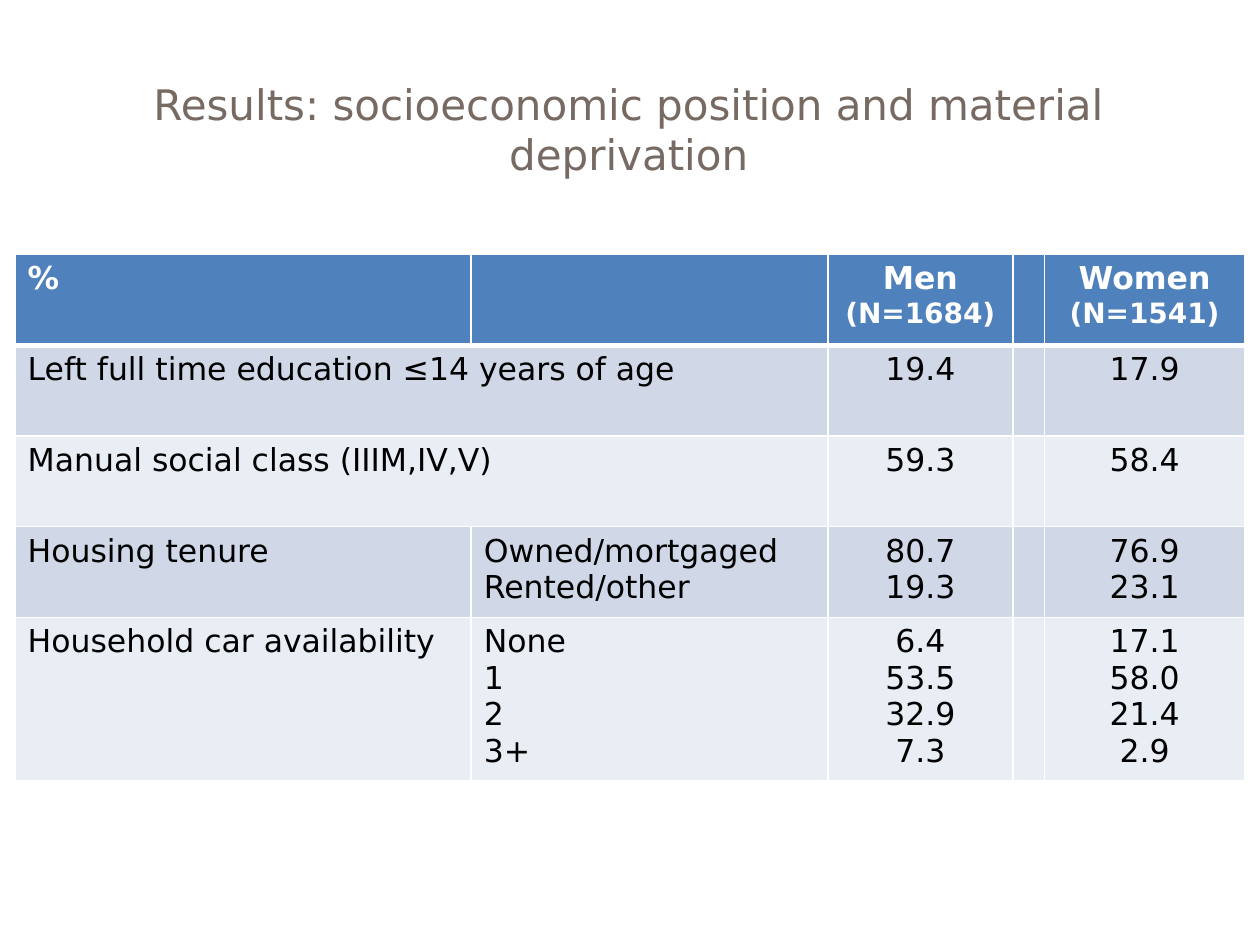
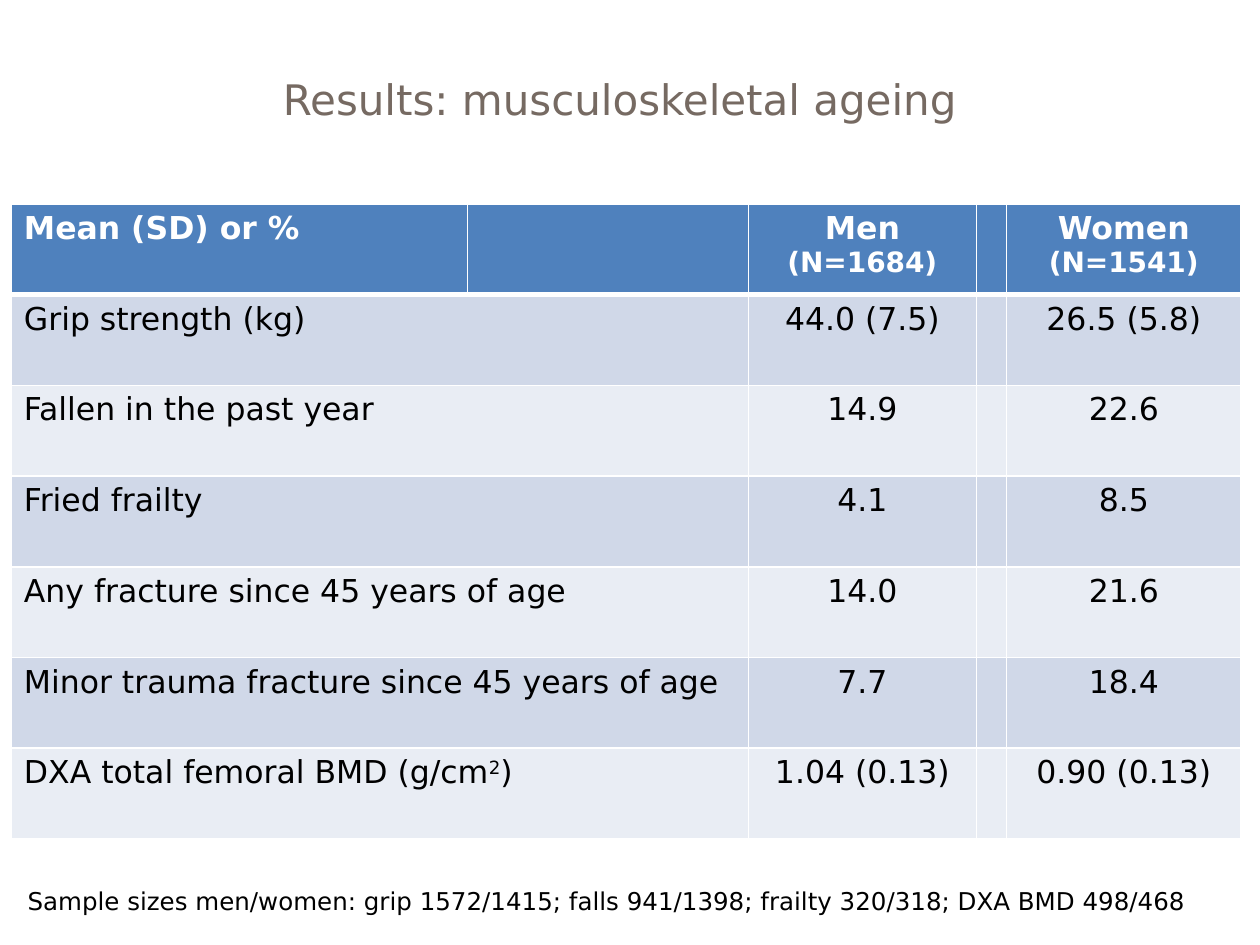
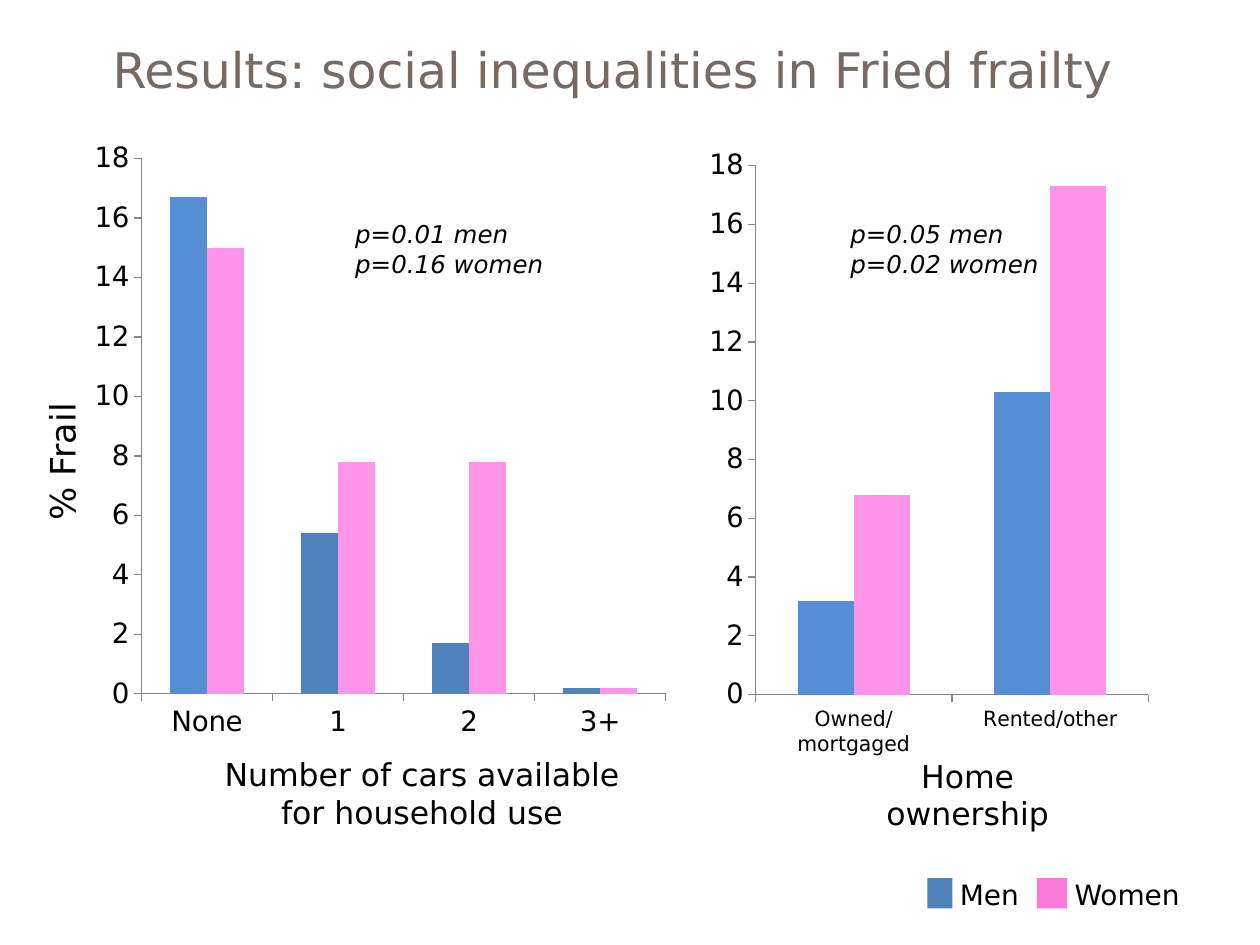
from dataclasses import dataclass

from lxml.etree import SubElement
from pptx import Presentation
from pptx.chart.data import CategoryChartData
from pptx.dml.color import RGBColor
from pptx.enum.chart import XL_CHART_TYPE, XL_TICK_MARK
from pptx.enum.shapes import MSO_SHAPE
from pptx.enum.text import MSO_ANCHOR, PP_ALIGN
from pptx.oxml.ns import qn
from pptx.util import Emu, Inches, Pt

FONT = "DejaVu Sans"
TITLE_BROWN = RGBColor(0x76, 0x6A, 0x62)
BLACK = RGBColor(0x00, 0x00, 0x00)
WHITE = RGBColor(0xFF, 0xFF, 0xFF)
AXIS_GREY = RGBColor(0x86, 0x86, 0x86)
BLUE = RGBColor(0x4F, 0x81, 0xBD)
LIGHT_BLUE = RGBColor(0x55, 0x8E, 0xD5)
PINK = RGBColor(0xFE, 0x94, 0xE7)
LEGEND_PINK = RGBColor(0xFB, 0x79, 0xD9)
BANDS = (RGBColor(0xD0, 0xD8, 0xE8), RGBColor(0xE9, 0xED, 0xF4))

# The slide is a grid of 100 columns by 75 rows.
SLIDE_W, SLIDE_H = Inches(10), Inches(7.5)
COL, ROW = SLIDE_W / 100, SLIDE_H / 75
TABLE_ROW = 7.2
TITLE_W, TITLE_H = 97, 7.1

MEN_WOMEN = ["Men\n(N=1684)", "", "Women\n(N=1541)"]


@dataclass(frozen=True)
class Box:
    x: float
    y: float
    w: float
    h: float

    def emu(self) -> tuple[Emu, Emu, Emu, Emu]:
        return (Emu(round(self.x * COL)), Emu(round(self.y * ROW)),
                Emu(round(self.w * COL)), Emu(round(self.h * ROW)))


@dataclass(frozen=True)
class Style:
    size: float
    color: RGBColor = BLACK
    bold: bool = False
    italic: bool = False
    align: PP_ALIGN = PP_ALIGN.LEFT


@dataclass(frozen=True)
class Label:
    text: str
    box: Box
    style: Style
    rotation: float = 0


@dataclass(frozen=True)
class ResultTable:
    """Cells are strings; None continues the cell to its left."""
    x: float
    y: float
    widths: list[float]
    rows: list[list[str | None]]


@dataclass(frozen=True)
class FrailtyChart:
    box: Box
    categories: list[str]
    men: list[float]
    women: list[float]
    men_color: RGBColor
    size: float
    plot: tuple[float, float, float, float]


@dataclass(frozen=True)
class LegendKey:
    name: str
    swatch: Box
    color: RGBColor


def write(tf, text: str, style: Style, later_size: float | None = None) -> None:
    """Fill a frame line by line; text between carets is superscript."""
    for i, line in enumerate(text.split("\n")):
        p = tf.add_paragraph() if i else tf.paragraphs[0]
        p.alignment = style.align
        for j, part in enumerate(line.split("^")):
            r = p.add_run()
            r.text = part
            f = r.font
            f.name, f.bold, f.italic = FONT, style.bold, style.italic
            f.size = Pt(later_size if i and later_size else style.size)
            f.color.rgb = style.color
            if j % 2:
                r._r.get_or_add_rPr().set("baseline", "30000")


def add_label(s, label: Label, wrap: bool = True) -> None:
    sp = s.shapes.add_textbox(*label.box.emu())
    sp.rotation = label.rotation
    tf = sp.text_frame
    tf.word_wrap = wrap
    tf.vertical_anchor = MSO_ANCHOR.MIDDLE
    write(tf, label.text, label.style)


def add_title(s, text: str, center: float, middle: float, size: float = 24) -> None:
    box = Box(center - TITLE_W / 2, middle - TITLE_H / 2, TITLE_W, TITLE_H)
    style = Style(size, TITLE_BROWN, align=PP_ALIGN.CENTER)
    add_label(s, Label(text, box, style), wrap=False)


def set_borders(cell, top: float, bottom: float) -> None:
    tc_pr = cell._tc.get_or_add_tcPr()
    for side, width in (("L", 1), ("R", 1), ("T", top), ("B", bottom)):
        ln = SubElement(tc_pr, qn(f"a:ln{side}"), w=str(Pt(width)))
        fill = SubElement(ln, qn("a:solidFill"))
        SubElement(fill, qn("a:srgbClr"), val=str(WHITE))


def add_result_table(s, spec: ResultTable) -> None:
    box = Box(spec.x, spec.y, sum(spec.widths), TABLE_ROW * len(spec.rows))
    table = s.shapes.add_table(len(spec.rows), len(spec.widths), *box.emu()).table
    for column, width in zip(table.columns, spec.widths):
        column.width = Emu(round(width * COL))
    for i, row in enumerate(spec.rows):
        table.rows[i].height = Emu(round(TABLE_ROW * ROW))
        for j, text in enumerate(row):
            cell = table.cell(i, j)
            set_borders(cell, top=3 if i == 1 else 1, bottom=1 if i else 3)
            cell.fill.solid()
            cell.fill.fore_color.rgb = BANDS[(i - 1) % 2] if i else BLUE
            if text is None:
                table.cell(i, j - 1).merge(cell)
            elif text:
                align = PP_ALIGN.CENTER if j > 1 else PP_ALIGN.LEFT
                style = Style(18, BLACK if i else WHITE, bold=i == 0, align=align)
                write(cell.text_frame, text, style, later_size=None if i else 16)


def set_plot_area(chart, plot: tuple[float, float, float, float]) -> None:
    area = chart._chartSpace.chart.plotArea
    for old in area.findall(qn("c:layout")):
        area.remove(old)
    layout = SubElement(area, qn("c:layout"))
    area.insert(0, layout)
    manual = SubElement(layout, qn("c:manualLayout"))
    values = [("layoutTarget", "inner"), ("xMode", "edge"), ("yMode", "edge"),
              *zip("xywh", map(str, plot))]
    for tag, value in values:
        SubElement(manual, qn(f"c:{tag}"), val=value)


def add_frailty_chart(s, spec: FrailtyChart) -> None:
    data = CategoryChartData()
    data.categories = spec.categories
    data.add_series("Men", spec.men)
    data.add_series("Women", spec.women)
    chart = s.shapes.add_chart(
        XL_CHART_TYPE.COLUMN_CLUSTERED, *spec.box.emu(), data).chart
    chart.has_legend = chart.has_title = False
    chart.font.name, chart.font.size = FONT, Pt(spec.size)
    chart.font.color.rgb = BLACK
    bars = chart.plots[0]
    bars.vary_by_categories = False
    bars.gap_width, bars.overlap = 150, 0
    for series, color in zip(bars.series, (spec.men_color, PINK)):
        series.format.fill.solid()
        series.format.fill.fore_color.rgb = color
    first = bars.series[0].points[0].format.fill
    first.solid()
    first.fore_color.rgb = LIGHT_BLUE
    for axis in (chart.category_axis, chart.value_axis):
        axis.has_major_gridlines = False
        axis.major_tick_mark = XL_TICK_MARK.OUTSIDE
        axis.format.line.color.rgb = AXIS_GREY
    scale = chart.value_axis
    scale.minimum_scale, scale.maximum_scale, scale.major_unit = 0, 18, 2
    scale.tick_labels.font.size = Pt(16)
    set_plot_area(chart, spec.plot)


def add_legend_key(s, key: LegendKey) -> None:
    sp = s.shapes.add_shape(MSO_SHAPE.RECTANGLE, *key.swatch.emu())
    sp.shadow.inherit = False
    sp.fill.solid()
    sp.fill.fore_color.rgb = key.color
    sp.line.fill.background()
    text_box = Box(key.swatch.x + key.swatch.w - 0.4, 69.1, 12, 3.8)
    add_label(s, Label(key.name, text_box, Style(16)))


DEPRIVATION = ResultTable(1.2, 20.2, [36.2, 28.3, 14.7, 2.5, 15.9], [
    ["%", "", *MEN_WOMEN],
    ["Left full time education ≤14 years of age", None, "19.4", "", "17.9"],
    ["Manual social class (IIIM,IV,V)", None, "59.3", "", "58.4"],
    ["Housing tenure", "Owned/mortgaged\nRented/other",
     "80.7\n19.3", "", "76.9\n23.1"],
    ["Household car availability", "None\n1\n2\n3+",
     "6.4\n53.5\n32.9\n7.3", "", "17.1\n58.0\n21.4\n2.9"],
])

AGEING = ResultTable(0.9, 16.2, [36.2, 22.3, 18.1, 2.4, 18.6], [
    ["Mean (SD) or %", "", *MEN_WOMEN],
    ["Grip strength (kg)", None, "44.0 (7.5)", "", "26.5 (5.8)"],
    ["Fallen in the past year", None, "14.9", "", "22.6"],
    ["Fried frailty", None, "4.1", "", "8.5"],
    ["Any fracture since 45 years of age", None, "14.0", "", "21.6"],
    ["Minor trauma fracture since 45 years of age", None, "7.7", "", "18.4"],
    ["DXA total femoral BMD (g/cm^2^)", None, "1.04 (0.13)", "", "0.90 (0.13)"],
])

SAMPLE_SIZES = Label(
    "Sample sizes men/women: grip 1572/1415; falls 941/1398; "
    "frailty 320/318; DXA BMD 498/468", Box(1.2, 69.8, 97.8, 3.4), Style(14))

CHARTS = [
    FrailtyChart(Box(7.5, 9, 47.2, 51.2), ["None", "1", "2", "3+"],
                 [16.7, 5.4, 1.7, 0.2], [15, 7.8, 7.8, 0.2],
                 BLUE, 16, (0.07, 0.07, 0.89, 0.83)),
    FrailtyChart(Box(56.3, 10.6, 37.8, 51.2), ["Owned/mortgaged", "Rented/other"],
                 [3.2, 10.3], [6.8, 17.3],
                 LIGHT_BLUE, 12, (0.07, 0.05, 0.85, 0.82)),
]

AXIS_NAME = Style(18, align=PP_ALIGN.CENTER)
P_VALUE = Style(14, italic=True)
CHART_LABELS = [
    Label("% Frail", Box(-6.2, 29, 22.2, 4.4), Style(20), rotation=270),
    Label("Number of cars available\nfor household use",
          Box(7.5, 59.4, 52, 7.1), AXIS_NAME),
    Label("Home\nownership", Box(56.8, 59.5, 40, 7.1), AXIS_NAME),
    Label("p=0.01 men\np=0.16 women", Box(27.2, 16.9, 24.1, 5.7), P_VALUE),
    Label("p=0.05 men\np=0.02 women", Box(66.5, 16.9, 24.1, 5.7), P_VALUE),
]

LEGEND = [
    LegendKey("Men", Box(73.6, 69.7, 2, 2.4), BLUE),
    LegendKey("Women", Box(82.3, 69.7, 2.4, 2.4), LEGEND_PINK),
]


def main() -> None:
    prs = Presentation()
    prs.slide_width, prs.slide_height = SLIDE_W, SLIDE_H
    deprivation, ageing, frailty = (
        prs.slides.add_slide(prs.slide_layouts[6]) for _ in range(3))

    add_title(deprivation, "Results: socioeconomic position and material deprivation",
              49.9, 10.2)
    add_result_table(deprivation, DEPRIVATION)

    add_title(ageing, "Results: musculoskeletal ageing", 49.2, 7.8)
    add_result_table(ageing, AGEING)
    add_label(ageing, SAMPLE_SIZES)

    add_title(frailty, "Results: social inequalities in Fried frailty",
              48.6, 5.5, size=28)
    for chart in CHARTS:
        add_frailty_chart(frailty, chart)
    for label in CHART_LABELS:
        add_label(frailty, label)
    for key in LEGEND:
        add_legend_key(frailty, key)

    prs.save("out.pptx")


if __name__ == "__main__":
    main()
